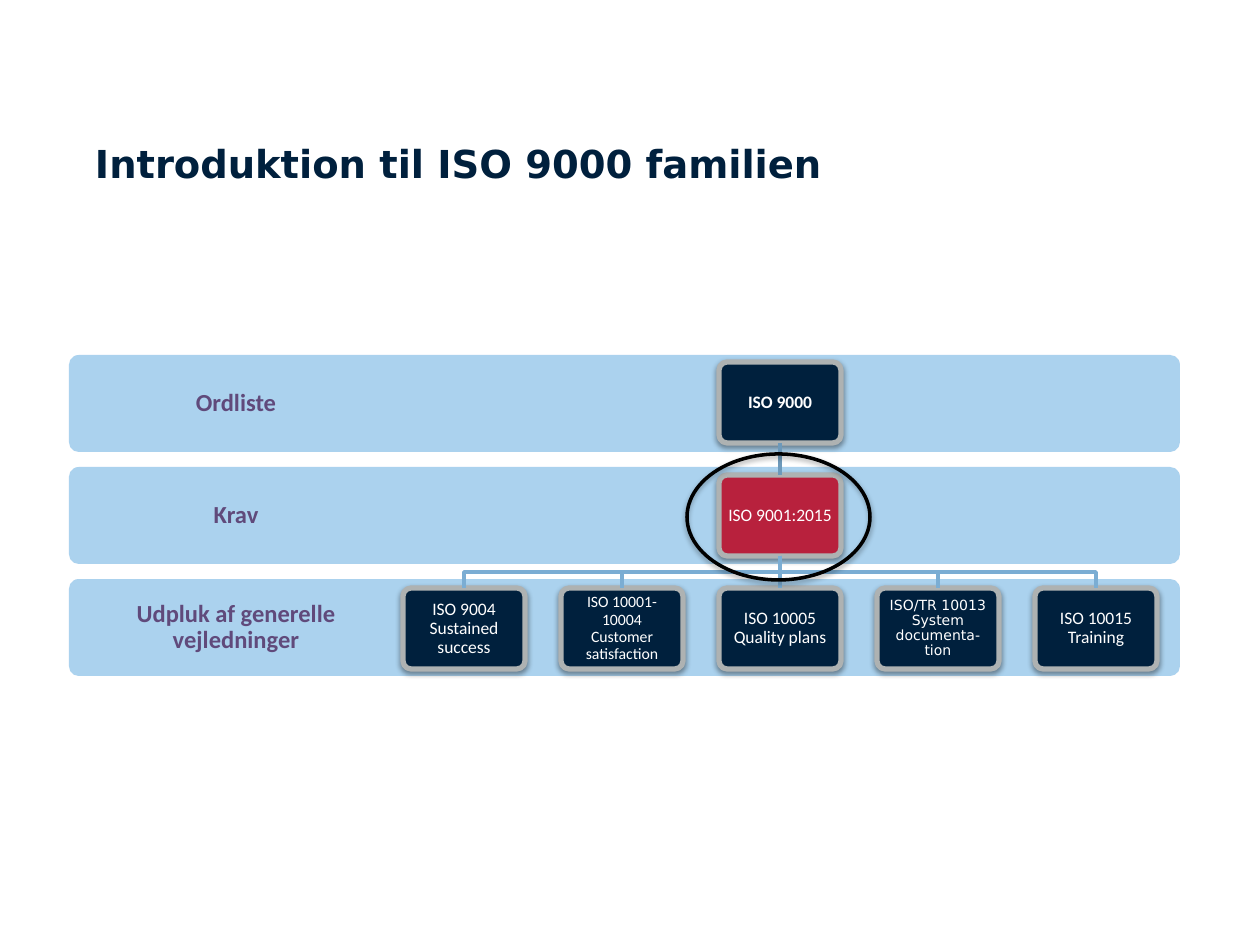
from dataclasses import dataclass
from typing import NamedTuple

from lxml.etree import SubElement
from pptx import Presentation
from pptx.dml.color import RGBColor
from pptx.enum.shapes import MSO_CONNECTOR as Connector, MSO_SHAPE as Preset
from pptx.enum.text import MSO_ANCHOR as Anchor, PP_ALIGN as Align
from pptx.oxml.ns import qn
from pptx.util import Emu, Pt

PX = 914400 / 126


@dataclass(frozen=True)
class Theme:
    navy: str = "00203D"
    red: str = "B8213D"
    white: str = "FFFFFF"
    black: str = "000000"
    band: str = "88BFE8"
    band_opacity: int = 70
    label: str = "604A7B"
    card_border: str = "AEB2B2"
    root_link: str = "6D99BA"
    branch_link: str = "7BADD3"
    body_font: str = "Calibri"
    wide_font: str = "DejaVu Sans"
    title_size: int = 22
    label_size: int = 14
    card_size: int = 10
    border_width: int = 3
    line_width: int = 2


THEME = Theme()


class Box(NamedTuple):
    left: int
    top: int
    width: int
    height: int


class Style(NamedTuple):
    size: int
    color: str
    bold: bool = False
    font: str = THEME.body_font


@dataclass(frozen=True)
class Card:
    text: str
    row: int
    column: int
    fill: str = THEME.navy
    size: int = THEME.card_size
    bold: bool = False
    font: str = THEME.body_font


BAND = Box(69, 355, 1111, 97)
BAND_PITCH = 112
LABEL_WIDTH = 334
LABEL_INSET = 14
CARD = Box(719, 362, 122, 81)
COLUMN_PITCH, ROW_PITCH = 158, 113
CARD_INSET = 5
CORNER = 0.1
TITLE = Box(95, 140, 1067, 102)
HIGHLIGHT = Box(687, 454, 183, 126)

BANDS = ("Ordliste", "Krav", "Udpluk af generelle vejledninger")
VOCABULARY = Card("ISO 9000", 0, 0, bold=True)
REQUIREMENTS = Card("ISO 9001:2015", 1, 0, fill=THEME.red)
GUIDES = (
    Card("ISO 9004 Sustained success", 2, -2),
    Card("ISO 10001-10004\nCustomer satisfaction", 2, -1, size=9),
    Card("ISO 10005\nQuality plans", 2, 0),
    Card("ISO/TR 10013\nSystem documenta-tion", 2, 1, size=8, font=THEME.wide_font),
    Card("ISO 10015\nTraining", 2, 2),
)


def px(length: float) -> Emu:
    return Emu(round(length * PX))


def rgb(color: str) -> RGBColor:
    return RGBColor.from_string(color)


def place(box: Box) -> tuple:
    return tuple(px(length) for length in box)


def write(shape, text: str, style: Style, inset: int = 0, centred: bool = True) -> None:
    frame = shape.text_frame
    frame.word_wrap = True
    frame.margin_left = frame.margin_right = px(inset)
    frame.margin_top = frame.margin_bottom = px(inset)
    frame.vertical_anchor = Anchor.MIDDLE if centred else Anchor.TOP
    frame.text = text
    for paragraph in frame.paragraphs:
        paragraph.alignment = Align.CENTER if centred else Align.LEFT
        if centred:
            paragraph.line_spacing = 0.9
        for run in paragraph.runs:
            run.font.size = Pt(style.size)
            run.font.bold = style.bold
            run.font.name = style.font
            run.font.color.rgb = rgb(style.color)


def set_opacity(color_parent, percent: int) -> None:
    color = color_parent.find(qn("a:srgbClr"))
    SubElement(color, qn("a:alpha"), val=str(percent * 1000))


def drop_shadow(shape, percent: int) -> None:
    shape.shadow.inherit = False
    effects = shape._element.spPr.find(qn("a:effectLst"))
    shadow = SubElement(
        effects, qn("a:outerShdw"), blurRad=str(Pt(3.1)), dist=str(Pt(1.6)),
        dir="5400000", rotWithShape="0",
    )
    SubElement(shadow, qn("a:srgbClr"), val=THEME.black)
    set_opacity(shadow, percent)


def set_line(shape, color: str, width: int = THEME.line_width) -> None:
    shape.line.color.rgb = rgb(color)
    shape.line.width = Pt(width)


def draw_band(shapes, row: int, text: str) -> None:
    box = BAND._replace(top=BAND.top + row * BAND_PITCH)
    band = shapes.add_shape(Preset.ROUNDED_RECTANGLE, *place(box))
    band.adjustments[0] = CORNER
    band.shadow.inherit = False
    band.fill.solid()
    band.fill.fore_color.rgb = rgb(THEME.band)
    set_opacity(band._element.spPr.find(qn("a:solidFill")), THEME.band_opacity)
    band.line.fill.background()
    label = shapes.add_textbox(*place(box._replace(width=LABEL_WIDTH)))
    write(label, text, Style(THEME.label_size, THEME.label, True), LABEL_INSET)


def card_box(card: Card) -> Box:
    return CARD._replace(
        left=CARD.left + card.column * COLUMN_PITCH,
        top=CARD.top + card.row * ROW_PITCH,
    )


def draw_card(shapes, card: Card):
    shape = shapes.add_shape(Preset.ROUNDED_RECTANGLE, *place(card_box(card)))
    shape.adjustments[0] = CORNER
    shape.fill.solid()
    shape.fill.fore_color.rgb = rgb(card.fill)
    set_line(shape, THEME.card_border, THEME.border_width)
    drop_shadow(shape, 38)
    write(shape, card.text, Style(card.size, THEME.white, card.bold, card.font), CARD_INSET)
    return shape


def link_straight(shapes, upper, lower, color: str) -> None:
    link = shapes.add_connector(Connector.STRAIGHT, 0, 0, 0, 0)
    link.begin_connect(upper, 2)
    link.end_connect(lower, 0)
    set_line(link, color)
    SubElement(link._element.spPr, qn("a:effectLst"))


def link_elbow(shapes, parent: Card, child: Card) -> None:
    upper, lower = card_box(parent), card_box(child)
    start_x, end_x = (box.left + box.width // 2 for box in (upper, lower))
    start_y, end_y = upper.top + upper.height, lower.top
    middle_y = (start_y + end_y) // 2
    builder = shapes.build_freeform(start_x, start_y, scale=PX)
    builder.add_line_segments(
        [(start_x, middle_y), (end_x, middle_y), (end_x, end_y)], close=False
    )
    link = builder.convert_to_shape()
    link.fill.background()
    link.shadow.inherit = False
    set_line(link, THEME.branch_link)


def main() -> None:
    deck = Presentation()
    deck.slide_width, deck.slide_height = px(1260), px(945)
    shapes = deck.slides.add_slide(deck.slide_layouts[6]).shapes

    title = shapes.add_textbox(*place(TITLE))
    title_style = Style(THEME.title_size, THEME.navy, True, THEME.wide_font)
    write(title, "Introduktion til ISO 9000 familien", title_style, centred=False)

    for row, text in enumerate(BANDS):
        draw_band(shapes, row, text)

    vocabulary = draw_card(shapes, VOCABULARY)
    requirements = draw_card(shapes, REQUIREMENTS)
    link_straight(shapes, vocabulary, requirements, THEME.root_link)
    for guide in GUIDES:
        guide_card = draw_card(shapes, guide)
        if guide.column == REQUIREMENTS.column:
            link_straight(shapes, requirements, guide_card, THEME.branch_link)
        else:
            link_elbow(shapes, REQUIREMENTS, guide)

    highlight = shapes.add_shape(Preset.OVAL, *place(HIGHLIGHT))
    highlight.fill.background()
    set_line(highlight, THEME.black)
    drop_shadow(highlight, 35)

    deck.save("out.pptx")


if __name__ == "__main__":
    main()
